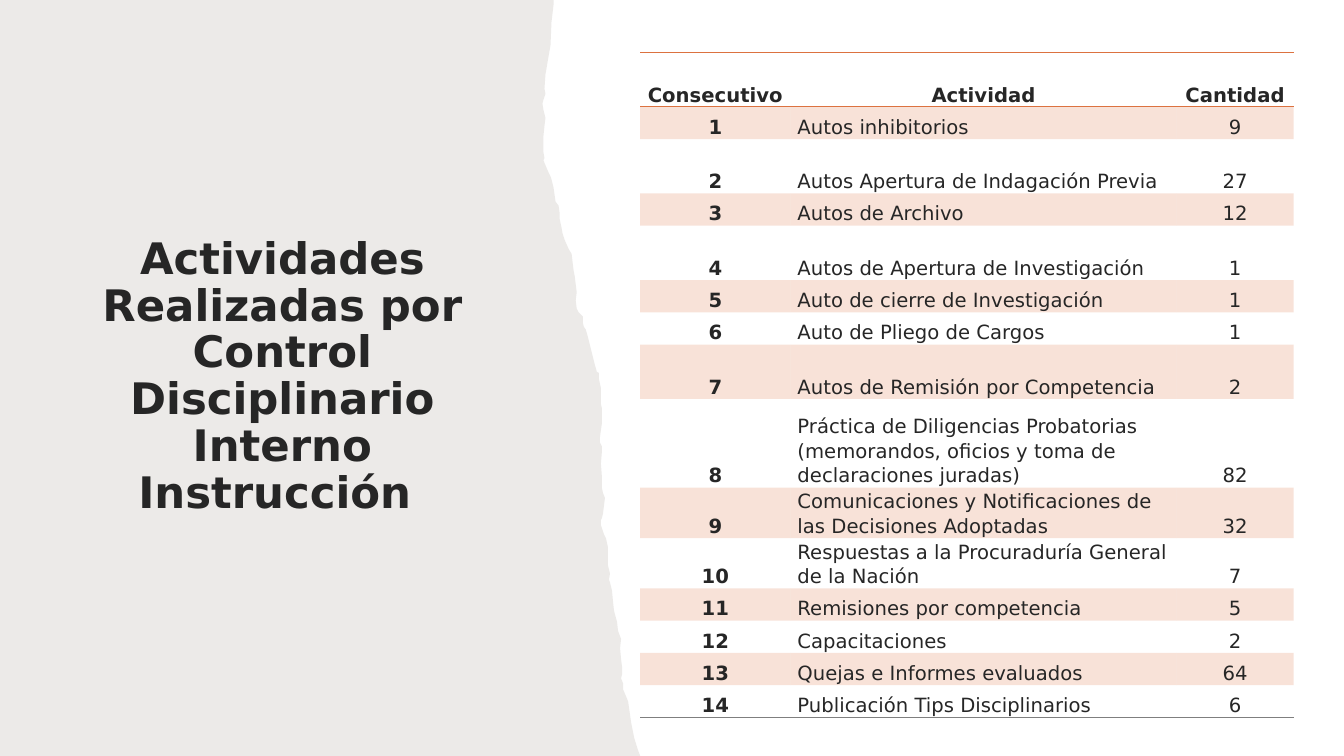
from lxml.etree import SubElement
from pptx import Presentation
from pptx.dml.color import RGBColor
from pptx.enum.text import MSO_ANCHOR as Anchor, PP_ALIGN as Align
from pptx.oxml import parse_xml
from pptx.oxml.ns import nsdecls, qn
from pptx.util import Inches, Pt

FONT = "DejaVu Sans"
INK = RGBColor(0x26, 0x26, 0x26)
ORANGE = RGBColor(0xDC, 0x72, 0x40)
TAUPE = RGBColor(0x82, 0x76, 0x6A)
GRAY = RGBColor(0x7F, 0x7F, 0x7F)
PLAIN_TABLE = "{2D5ABB26-0587-4C30-8999-92F81FD0307C}"

TORN_EDGE = [
    (549, 0), (549, 5), (547, 22), (546, 45), (543, 62), (541, 74), (540, 88),
    (541, 93), (540, 96), (539, 99), (538, 103), (539, 109), (541, 117),
    (540, 125), (539, 135), (539, 151), (540, 157), (539, 159), (541, 164),
    (544, 171), (546, 175), (547, 178), (549, 186), (551, 200), (554, 204),
    (555, 211), (555, 217), (557, 226), (558, 232), (560, 238), (564, 247),
    (567, 252), (568, 261), (569, 269), (570, 274), (572, 290), (571, 298),
    (572, 306), (574, 310), (578, 314), (578, 320), (579, 324), (581, 327),
    (583, 334), (584, 338), (587, 350), (590, 362), (592, 369), (594, 370),
    (594, 376), (596, 385), (596, 401), (597, 405), (597, 420), (595, 434),
    (595, 439), (597, 443), (597, 448), (596, 460), (597, 473), (597, 484),
    (598, 489), (600, 494), (599, 502), (598, 510), (597, 514), (596, 516),
    (596, 521), (597, 524), (599, 530), (601, 534), (603, 543), (603, 561),
    (605, 569), (604, 575), (605, 578), (607, 586), (608, 597), (609, 606),
    (612, 617), (613, 626), (616, 634), (615, 643), (616, 654), (617, 662),
    (617, 669), (616, 673), (618, 678), (618, 684), (621, 691), (623, 696),
    (626, 717), (629, 732), (633, 745), (635, 750),
]

TITLE = "Actividades Realizadas por Control Disciplinario Interno Instrucción "
HEADINGS = ("Consecutivo", "Actividad", "Cantidad")
ACTIVITIES = [
    ("Autos inhibitorios", 9, 0.32),
    ("Autos Apertura de Indagación Previa", 27, 0.54),
    ("Autos de Archivo", 12, 0.32),
    ("Autos de Apertura de Investigación", 1, 0.54),
    ("Auto de cierre de Investigación", 1, 0.32),
    ("Auto de Pliego de Cargos", 1, 0.32),
    ("Autos de Remisión por Competencia", 2, 0.54),
    ("Práctica de Diligencias Probatorias (memorandos, oficios y toma de "
     "declaraciones juradas)", 82, 0.88),
    ("Comunicaciones y Notificaciones de las Decisiones Adoptadas", 32, 0.49),
    ("Respuestas a la Procuraduría General de la Nación", 7, 0.49),
    ("Remisiones por competencia", 5, 0.32),
    ("Capacitaciones", 2, 0.32),
    ("Quejas e Informes evaluados", 64, 0.32),
    ("Publicación Tips Disciplinarios", 6, 0.32),
]
HEADING_HEIGHT = 0.54
COLUMN_WIDTHS = (1.49, 3.83, 1.16)


def write(frame, text, size=14, bold=False, align=Align.CENTER, spacing=1.07, after=0):
    frame.word_wrap = True
    paragraph = frame.paragraphs[0]
    paragraph.alignment = align
    paragraph.line_spacing = spacing
    paragraph.space_after = Pt(after)
    run = paragraph.add_run()
    run.text = text
    run.font.name = FONT
    run.font.size = Pt(size)
    run.font.bold = bold
    run.font.color.rgb = INK


def tint(fill, properties, color, percent):
    fill.solid()
    fill.fore_color.rgb = color
    solid = properties.find(qn("a:solidFill"))
    SubElement(solid[0], qn("a:alpha"), val=str(percent * 1000))


def rule(cell, sides):
    properties = cell._tc.get_or_add_tcPr()
    for position, (side, color) in enumerate(sides.items()):
        properties.insert(position, parse_xml(
            f'<a:{side} {nsdecls("a")} w="12700"><a:solidFill>'
            f'<a:srgbClr val="{color}"/></a:solidFill></a:{side}>'))


def add_torn_panel(slide, left, top):
    builder = slide.shapes.build_freeform(0, 0, scale=Inches(0.01))
    builder.add_line_segments(TORN_EDGE + [(0, 750)], close=True)
    panel = builder.convert_to_shape(Inches(left), Inches(top))
    panel.shadow.inherit = False
    panel.line.fill.background()
    tint(panel.fill, panel._element.spPr, TAUPE, 15)


def add_title(slide, left, top, width, height):
    box = slide.shapes.add_textbox(*map(Inches, (left, top, width, height)))
    box.text_frame.vertical_anchor = Anchor.BOTTOM
    write(box.text_frame, TITLE, size=31, bold=True, spacing=0.9, after=6)


def add_activity_table(slide, left, top, width, height):
    rows = [HEADINGS] + [
        (str(number), name, str(count))
        for number, (name, count, _) in enumerate(ACTIVITIES, 1)]
    heights = [HEADING_HEIGHT] + [row_height for _, _, row_height in ACTIVITIES]
    frame = slide.shapes.add_table(
        len(rows), len(HEADINGS), *map(Inches, (left, top, width, height)))
    table = frame.table
    table.horz_banding = False
    table._tbl.tblPr.find(qn("a:tableStyleId")).text = PLAIN_TABLE
    for column, column_width in zip(table.columns, COLUMN_WIDTHS):
        column.width = Inches(column_width)
    for r, (values, row_height) in enumerate(zip(rows, heights)):
        table.rows[r].height = Inches(row_height)
        for c, value in enumerate(values):
            cell = table.cell(r, c)
            cell.margin_left = cell.margin_right = Inches(0.07)
            cell.margin_top = cell.margin_bottom = 0
            cell.vertical_anchor = Anchor.BOTTOM
            write(cell.text_frame, value, bold=r == 0 or c == 0,
                  align=Align.LEFT if r and c == 1 else Align.CENTER)
            if r % 2:
                tint(cell.fill, cell._tc.get_or_add_tcPr(), ORANGE, 20)
            else:
                cell.fill.background()
            if r == 0:
                rule(cell, {"lnT": ORANGE, "lnB": ORANGE})
            elif r == len(rows) - 1:
                rule(cell, {"lnB": GRAY})


def main():
    deck = Presentation()
    deck.slide_width, deck.slide_height = Inches(13.33), Inches(7.5)
    slide = deck.slides.add_slide(deck.slide_layouts[6])
    add_torn_panel(slide, 0, 0)
    add_title(slide, 0.82, 2.13, 3.96, 3.06)
    add_activity_table(slide, 6.35, 0.52, 6.48, 6.6)
    deck.save("out.pptx")


if __name__ == "__main__":
    main()
